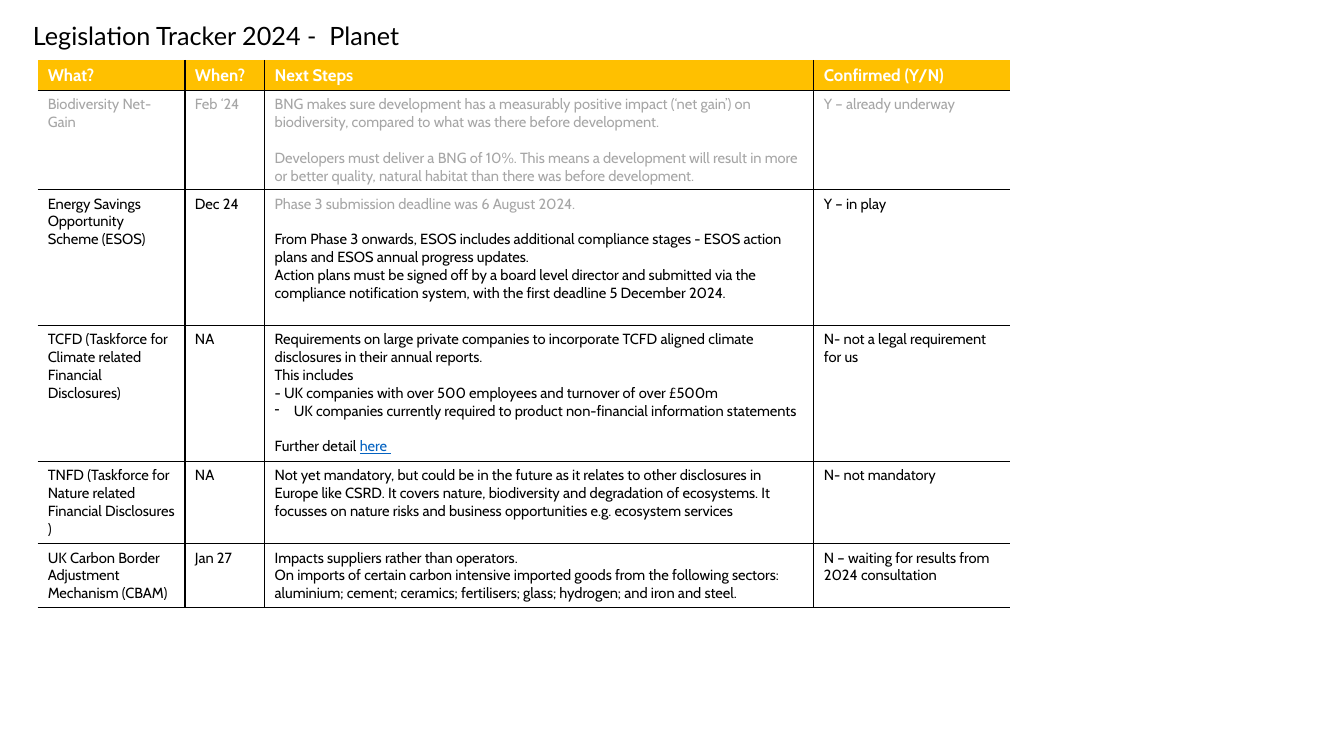
from lxml import etree
from pptx import Presentation
from pptx.dml.color import RGBColor
from pptx.enum.text import MSO_AUTO_SIZE
from pptx.oxml.ns import qn
from pptx.util import Cm, Pt

GROW = MSO_AUTO_SIZE.SHAPE_TO_FIT_TEXT
COLORS = {"amber": "FFC000", "white": "FFFFFF", "grey": "A6A6A6",
          "black": "000000", "link": "0563C1"}
COL_WIDTHS = [3.71, 2.01, 13.84, 4.95]
ROW_HEIGHTS = [0.77, 2.5, 3.42, 3.43, 2.07, 1.6]
GAP = {"before": 12.8}
GREY = {"color": "grey"}

ROWS = [
    ["What?", "When?", [("Next Steps", {})], "Confirmed (Y/N)"],
    ["Biodiversity Net-Gain", "Feb ‘24", [
        ("BNG makes sure development has a measurably positive impact (‘net gain’) on biodiversity, compared to what was there before development.", {}),
        ("Developers must deliver a BNG of 10%. This means a development will result in more or better quality, natural habitat than there was before development.", GAP),
    ], "Y – already underway"],
    ["Energy Savings Opportunity Scheme (ESOS)", "Dec 24", [
        ("Phase 3 submission deadline was 6 August 2024.", GREY),
        ("From Phase 3 onwards, ESOS includes additional compliance stages - ESOS action plans and ESOS annual progress updates.", GAP),
        ("Action plans must be signed off by a board level director and submitted via the compliance notification system, with the first deadline 5 December 2024.", {}),
    ], "Y – in play"],
    ["TCFD (Taskforce for Climate related Financial Disclosures)", "NA", [
        ("Requirements on large private companies to incorporate TCFD aligned climate disclosures in their annual reports.", {}),
        ("This includes", {}),
        ("- UK companies with over 500 employees and turnover of over £500m", {}),
        ("UK companies currently required to product non-financial information statements", {"bullet": "-"}),
        ("Further detail ", {**GAP, "link": "here "}),
    ], "N- not a legal requirement for us"],
    ["TNFD (Taskforce for Nature related Financial Disclosures )", "NA", [
        ("Not yet mandatory, but could be in the future as it relates to other disclosures in Europe like CSRD. It covers nature, biodiversity and degradation of ecosystems. It focusses on nature risks and business opportunities e.g. ecosystem services", {}),
    ], "N- not mandatory"],
    ["UK Carbon Border Adjustment Mechanism (CBAM)", "Jan 27", [
        ("Impacts suppliers rather than operators.", {}),
        ("On imports of certain carbon intensive imported goods from the following sectors: aluminium; cement; ceramics; fertilisers; glass; hydrogen; and iron and steel.", {}),
    ], "N – waiting for results from 2024 consultation"],
]


def write(p, text, size=10.5, font="Cabin", color="black", bold=False,
          before=0, bullet=None, link=None):
    p.space_before = Pt(before)
    if bullet:
        pPr = p._p.get_or_add_pPr()
        pPr.set("marL", str(Cm(0.48)))
        pPr.set("indent", str(-Cm(0.48)))
        etree.SubElement(pPr, qn("a:buChar")).set("char", bullet)
    runs = [(text, color, False)]
    if link:
        runs.append((link, "link", True))
    for words, tone, underline in runs:
        r = p.add_run()
        r.text = words
        r.font.size = Pt(size)
        r.font.name = font
        r.font.bold = bold
        r.font.underline = underline
        r.font.color.rgb = RGBColor.from_string(COLORS[tone])


def add_border(cell, side, visible):
    ln = etree.SubElement(cell._tc.get_or_add_tcPr(), qn("a:ln" + side))
    ln.set("w", str(Pt(1)))
    if visible:
        fill = etree.SubElement(ln, qn("a:solidFill"))
        etree.SubElement(fill, qn("a:srgbClr")).set("val", COLORS["black"])
    else:
        etree.SubElement(ln, qn("a:noFill"))


prs = Presentation()
prs.slide_width = Cm(33.87)
prs.slide_height = Cm(19.05)
s = prs.slides.add_slide(prs.slide_layouts[6])

frame = s.shapes.add_table(len(ROWS), len(COL_WIDTHS), Cm(0.95), Cm(1.51),
                           Cm(sum(COL_WIDTHS)), Cm(sum(ROW_HEIGHTS)))
table = frame.table
table.horz_banding = False
for column, width in zip(table.columns, COL_WIDTHS):
    column.width = Cm(width)
for row, height in zip(table.rows, ROW_HEIGHTS):
    row.height = Cm(height)

row_formats = [{"size": 12, "color": "white", "bold": True}, GREY] + [{}] * 4
for i, (row, row_format) in enumerate(zip(ROWS, row_formats)):
    for j, content in enumerate(row):
        cell = table.cell(i, j)
        add_border(cell, "L", j > 0)
        add_border(cell, "R", j < len(row) - 1)
        add_border(cell, "T", i > 0)
        add_border(cell, "B", True)
        if i == 0:
            cell.fill.solid()
            cell.fill.fore_color.rgb = RGBColor.from_string(COLORS["amber"])
        else:
            cell.fill.background()
        tf = cell.text_frame
        paragraphs = [(content, {})] if isinstance(content, str) else content
        for k, (text, own_format) in enumerate(paragraphs):
            p = tf.add_paragraph() if k else tf.paragraphs[0]
            write(p, text, **{**row_format, **own_format})

title = s.shapes.add_textbox(Cm(0.58), Cm(0.38), Cm(12.95), Cm(1.02))
tf = title.text_frame
tf.word_wrap = True
tf.auto_size = GROW
write(tf.paragraphs[0], "Legislation Tracker 2024 -  Planet", size=18, font="Lato")

prs.save("out.pptx")
